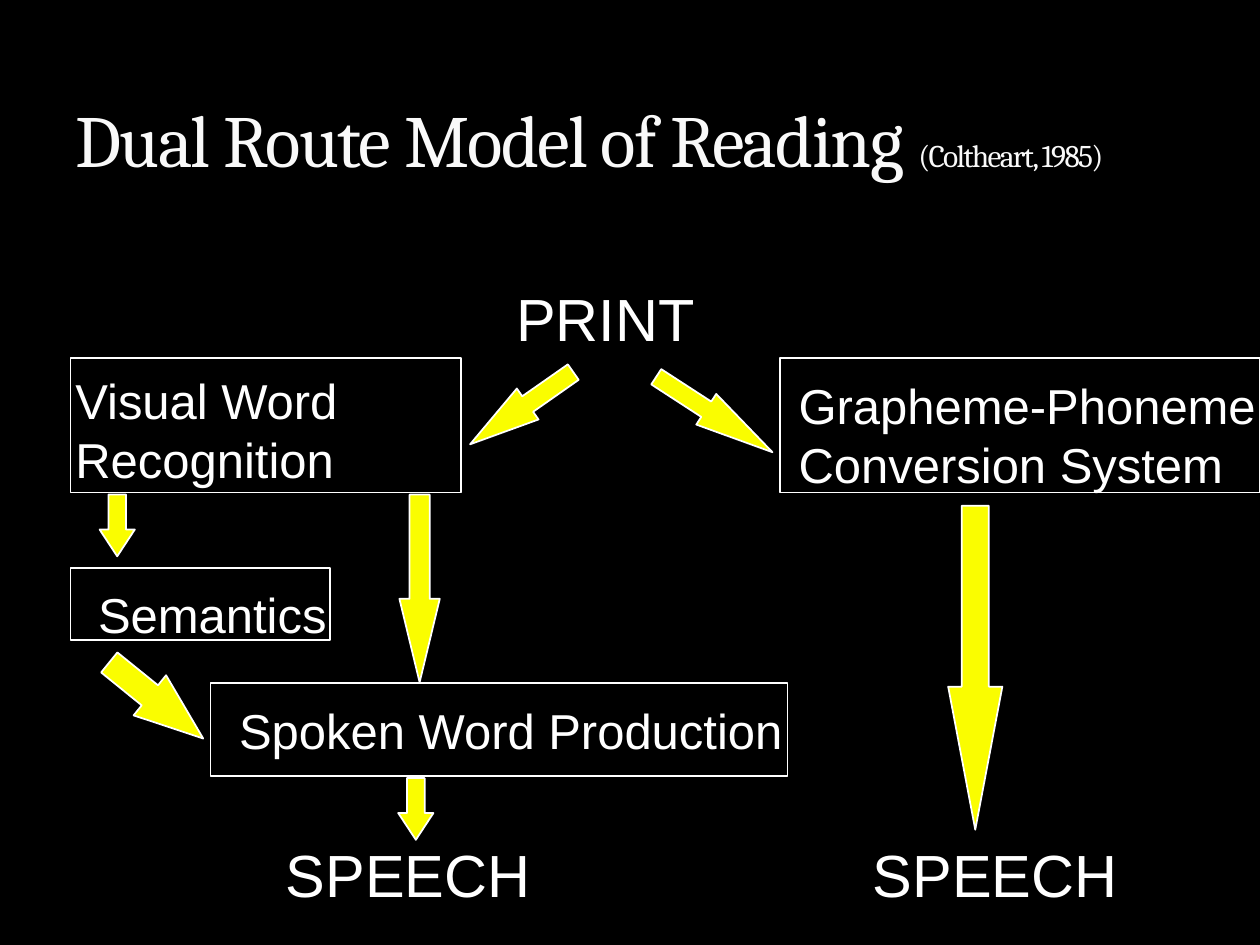
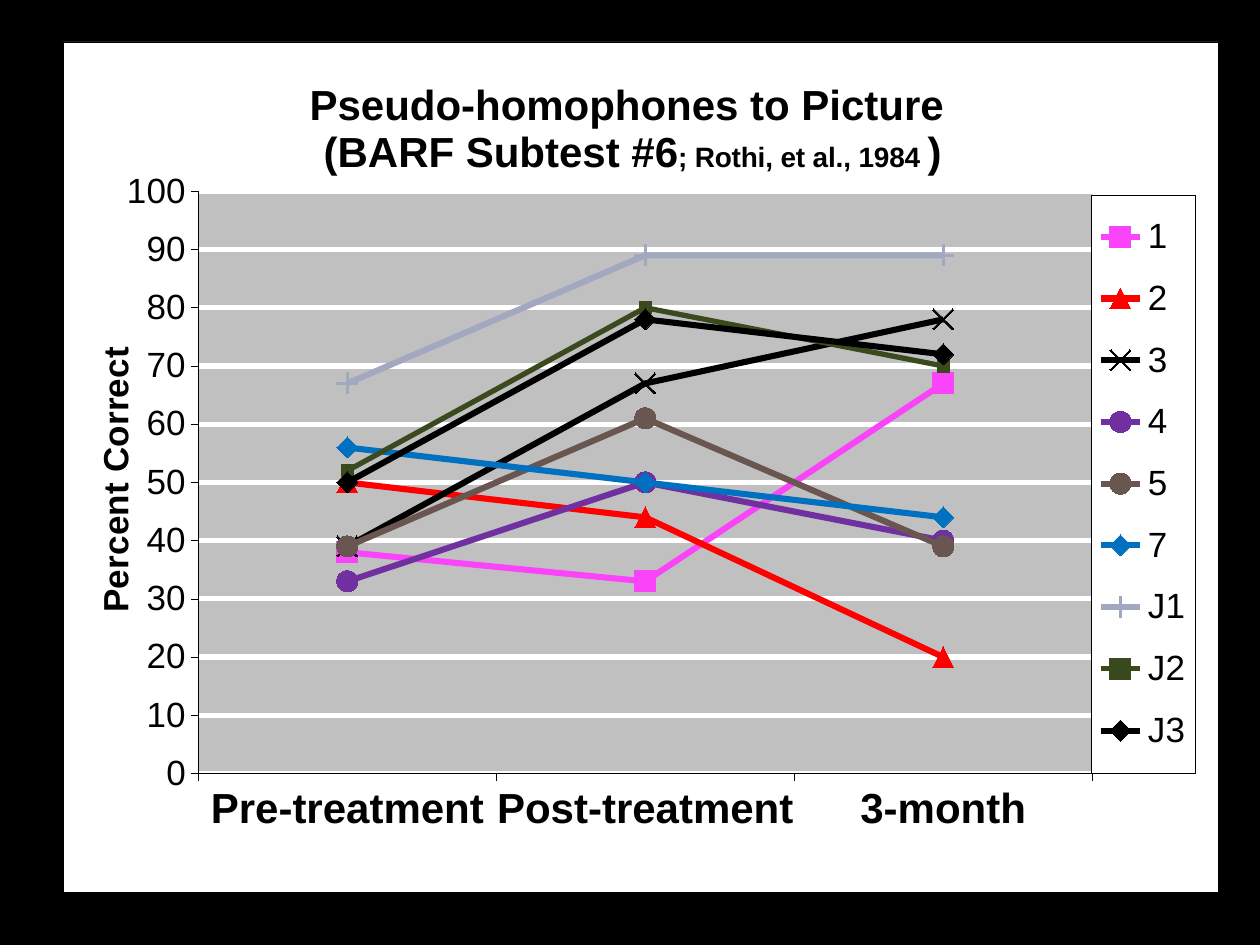
import pptx
import pptx.util
import pptx.chart.data
import pptx.dml.color
import pptx.enum.chart
import pptx.enum.shapes
import pptx.enum.text
import pptx.oxml
import pptx.oxml.ns

Inches, Pt = pptx.util.Inches, pptx.util.Pt
qn = pptx.oxml.ns.qn
MARKER = pptx.enum.chart.XL_MARKER_STYLE
SHAPE = pptx.enum.shapes.MSO_SHAPE

# Shared style
COLORS = {"black": "000000", "white": "FFFFFF", "title": "F9F9F9", "arrow": "FAFD00", "plot": "C0C0C0"}
BODY_FONT, TITLE_FONT = "Arial", "Cambria"

# Slide 1 content: lengths in inches
MODEL_TITLE = [("Dual Route Model of Reading ", 42), ("(Coltheart, 1985)", 18)]
BOXES = [  # left, top, width, height
    (0.56, 2.84, 3.1, 1.07),
    (6.19, 2.84, 3.81, 1.07),
    (0.56, 4.51, 2.06, 0.57),
    (1.67, 5.42, 4.58, 0.74),
]
LABELS = [  # lines, size, place, wrap
    (["PRINT"], 34, (4, 2.19, 1.74, 0.67), True),
    (["Visual Word", "Recognition"], 28, (0.5, 2.89, 2.65, 1.04), True),
    (["Grapheme-Phoneme", "Conversion System"], 28, (6.24, 2.93, 3.88, 1.04), False),
    (["Semantics"], 28, (0.68, 4.59, 2.03, 0.57), False),
    (["Spoken Word Production"], 28, (1.8, 5.51, 4.56, 0.57), False),
    (["SPEECH"], 34, (2.17, 6.6, 2.32, 0.67), True),
    (["SPEECH"], 34, (6.83, 6.6, 2.16, 0.67), False),
]
SHORT_ARROW = (0.49, 0.28, 0.76)
ARROWS = [  # centre x, centre y, direction in degrees, (length, thickness, head)
    (0.93, 4.17, 90, SHORT_ARROW),
    (7.74, 5.3, 90, (2.57, 0.43, 2.64)),
    (3.33, 4.67, 90, (1.49, 0.32, 2.07)),
    (1.24, 5.56, 39, (0.96, 0.41, 1.33)),
    (4.14, 3.24, 145, (1, 0.3, 1.86)),
    (5.67, 3.29, 33, (1.1, 0.29, 2.16)),
    (3.3, 6.42, 90, SHORT_ARROW),
]

# Slide 2 content
CHART_PLACE = (0.5, 0.33, 9.17, 6.75)
CHART_TITLE = [
    [("Pseudo-homophones to Picture ", 24)],
    [("(BARF Subtest #6", 24), ("; Rothi, et al., 1984 ", 16), (")", 24)],
]
VALUE_TITLE = [[("Percent Correct ", 20)]]
STAGES = ["Pre-treatment", "Post-treatment", "3-month"]
PATIENTS = [  # name, scores, colour, marker, marker size, line width
    ("1", (38, 33, 67), "FA44FA", MARKER.SQUARE, 12, 3.5),
    ("2", (50, 44, 20), "FF0000", MARKER.TRIANGLE, 12, 3.5),
    ("3", (39, 67, 78), "000000", MARKER.X, 12, 3.5),
    ("4", (33, 50, 40), "7030A0", MARKER.CIRCLE, 12, 3.5),
    ("5", (39, 61, 39), "6A5650", MARKER.CIRCLE, 12, 3.5),
    ("7", (56, 50, 44), "0070C0", MARKER.DIAMOND, 12, 3.5),
    ("J1", (67, 89, 89), "A3A8C1", MARKER.PLUS, 12, 3.5),
    ("J2", (52, 80, 70), "3B4A1E", MARKER.SQUARE, 7, 3),
    ("J3", (50, 78, 72), "000000", MARKER.DIAMOND, 12, 3.5),
]


def rgb(color):
    return pptx.dml.color.RGBColor.from_string(COLORS.get(color, color))


def paint(fill, color):
    fill.solid()
    fill.fore_color.rgb = rgb(color)


def draw_line(line, color, width):
    paint(line.fill, color)
    line.width = Pt(width)


def style(font, size, color, name=BODY_FONT, bold=False):
    font.size, font.name, font.bold = Pt(size), name, bold
    font.color.rgb = rgb(color)


def add_runs(paragraph, runs, color, name=BODY_FONT, bold=False):
    for text, size in runs:
        run = paragraph.add_run()
        run.text = text
        style(run.font, size, color, name, bold)


def add_block(slide, kind, place, fill):
    block = slide.shapes.add_shape(kind, *map(Inches, place))
    block.shadow.inherit = False
    paint(block.fill, fill)
    draw_line(block.line, "white", 1)
    return block


def add_label(slide, lines, size, place, wrap):
    label = slide.shapes.add_textbox(*map(Inches, place))
    frame = label.text_frame
    frame.word_wrap = wrap
    frame.text = "\n".join(lines)
    for paragraph in frame.paragraphs:
        style(paragraph.font, size, "white")
    frame.auto_size = pptx.enum.text.MSO_AUTO_SIZE.SHAPE_TO_FIT_TEXT


def add_arrow(slide, x, y, direction, size):
    length, thickness, head = size
    place = (x - length / 2, y - thickness / 2, length, thickness)
    arrow = add_block(slide, SHAPE.RIGHT_ARROW, place, "arrow")
    arrow.adjustments[0], arrow.adjustments[1] = 0.5, head
    arrow.rotation = direction


def set_layout(part, index, inner=False, **shares):
    """Place a chart part by shares of the chart's size."""
    for old in part.findall(qn("c:layout")):
        part.remove(old)
    target = '<c:layoutTarget val="inner"/>' if inner else ""
    modes = "".join(f'<c:{axis}Mode val="edge"/>' for axis in "xy")
    values = "".join(f'<c:{key} val="{share}"/>' for key, share in shares.items())
    part.insert(index, pptx.oxml.parse_xml(
        f'<c:layout {pptx.oxml.ns.nsdecls("c")}><c:manualLayout>'
        f"{target}{modes}{values}</c:manualLayout></c:layout>"))


def fill_chart_title(title, lines, x, y):
    frame = title.text_frame
    for number, runs in enumerate(lines):
        paragraph = frame.add_paragraph() if number else frame.paragraphs[0]
        add_runs(paragraph, runs, "black", bold=True)
    set_layout(title._element, 1, x=x, y=y)
    return frame


def build_model(prs):
    slide = prs.slides.add_slide(prs.slide_layouts[5])
    title = slide.shapes.title
    title.left, title.top, title.width, title.height = map(Inches, (0.5, 0.17, 9, 1.33))
    frame = title.text_frame
    frame.vertical_anchor = pptx.enum.text.MSO_ANCHOR.BOTTOM
    frame.auto_size = pptx.enum.text.MSO_AUTO_SIZE.NONE
    heading = frame.paragraphs[0]
    heading.alignment = pptx.enum.text.PP_ALIGN.LEFT
    add_runs(heading, MODEL_TITLE, "title", TITLE_FONT)
    for run in heading.runs:
        run.font._element.set("spc", "-100")

    for place in BOXES:
        add_block(slide, SHAPE.RECTANGLE, place, "black")
    for label in LABELS:
        add_label(slide, *label)
    for arrow in ARROWS:
        add_arrow(slide, *arrow)


def build_results(prs):
    slide = prs.slides.add_slide(prs.slide_layouts[6])
    data = pptx.chart.data.CategoryChartData(number_format="0")
    data.categories = STAGES
    for name, scores, *_ in PATIENTS:
        data.add_series(name, scores)
    chart = slide.shapes.add_chart(
        pptx.enum.chart.XL_CHART_TYPE.LINE_MARKERS, *map(Inches, CHART_PLACE), data).chart
    style(chart.font, 12, "black")
    chart.plots[0].vary_by_categories = False

    # Lines and markers
    for series, (_, _, color, marker, size, width) in zip(chart.plots[0].series, PATIENTS):
        series.smooth = False
        draw_line(series.format.line, color, width)
        series.marker.style, series.marker.size = marker, size
        paint(series.marker.format.fill, color)
        draw_line(series.marker.format.line, color, 0.75)

    # Axes
    stages, percent = chart.category_axis, chart.value_axis
    for axis, size, bold in ((stages, 24, True), (percent, 20, False)):
        style(axis.tick_labels.font, size, "black", bold=bold)
        axis.major_tick_mark = pptx.enum.chart.XL_TICK_MARK.OUTSIDE
        axis.minor_tick_mark = pptx.enum.chart.XL_TICK_MARK.NONE
        draw_line(axis.format.line, "black", 0.25)
    percent.minimum_scale, percent.maximum_scale, percent.major_unit = 0, 100, 10
    percent.tick_labels.number_format = "0"
    percent.tick_labels.number_format_is_linked = False
    draw_line(percent.major_gridlines.format.line, "white", 3)

    # Titles
    fill_chart_title(chart.chart_title, CHART_TITLE, 0.21, 0.04)
    upright = fill_chart_title(percent.axis_title, VALUE_TITLE, 0.02, 0.34)
    upright._txBody.find(qn("a:bodyPr")).set("rot", "-5400000")

    # Legend, plot and chart areas
    chart.has_legend = True
    legend = chart.legend
    legend.position = pptx.enum.chart.XL_LEGEND_POSITION.RIGHT
    legend.include_in_layout = False
    style(legend.font, 20, "black")
    set_layout(legend._element, 1, x=0.89, y=0.18, w=0.09, h=0.68)
    plot_area = chart._chartSpace.chart.plotArea
    set_layout(plot_area, 0, inner=True, x=0.117, y=0.176, w=0.774, h=0.685)

    def area(fill, border=None):
        solid = '<a:solidFill><a:srgbClr val="{}"/></a:solidFill>'
        line = solid.format(COLORS[border]) if border else "<a:noFill/>"
        return pptx.oxml.parse_xml(
            f'<c:spPr {pptx.oxml.ns.nsdecls("c", "a")}>{solid.format(COLORS[fill])}'
            f'<a:ln w="{Pt(0.25)}">{line}</a:ln></c:spPr>')

    plot_area.append(area("plot"))
    for part in (legend._element, chart._chartSpace):
        part.find(qn("c:txPr")).addprevious(area("white", "black"))


def main():
    prs = pptx.Presentation()
    prs.slide_width, prs.slide_height = Inches(10), Inches(7.5)
    paint(prs.slide_master.background.fill, "black")
    build_model(prs)
    build_results(prs)
    prs.save("out.pptx")


if __name__ == "__main__":
    main()
